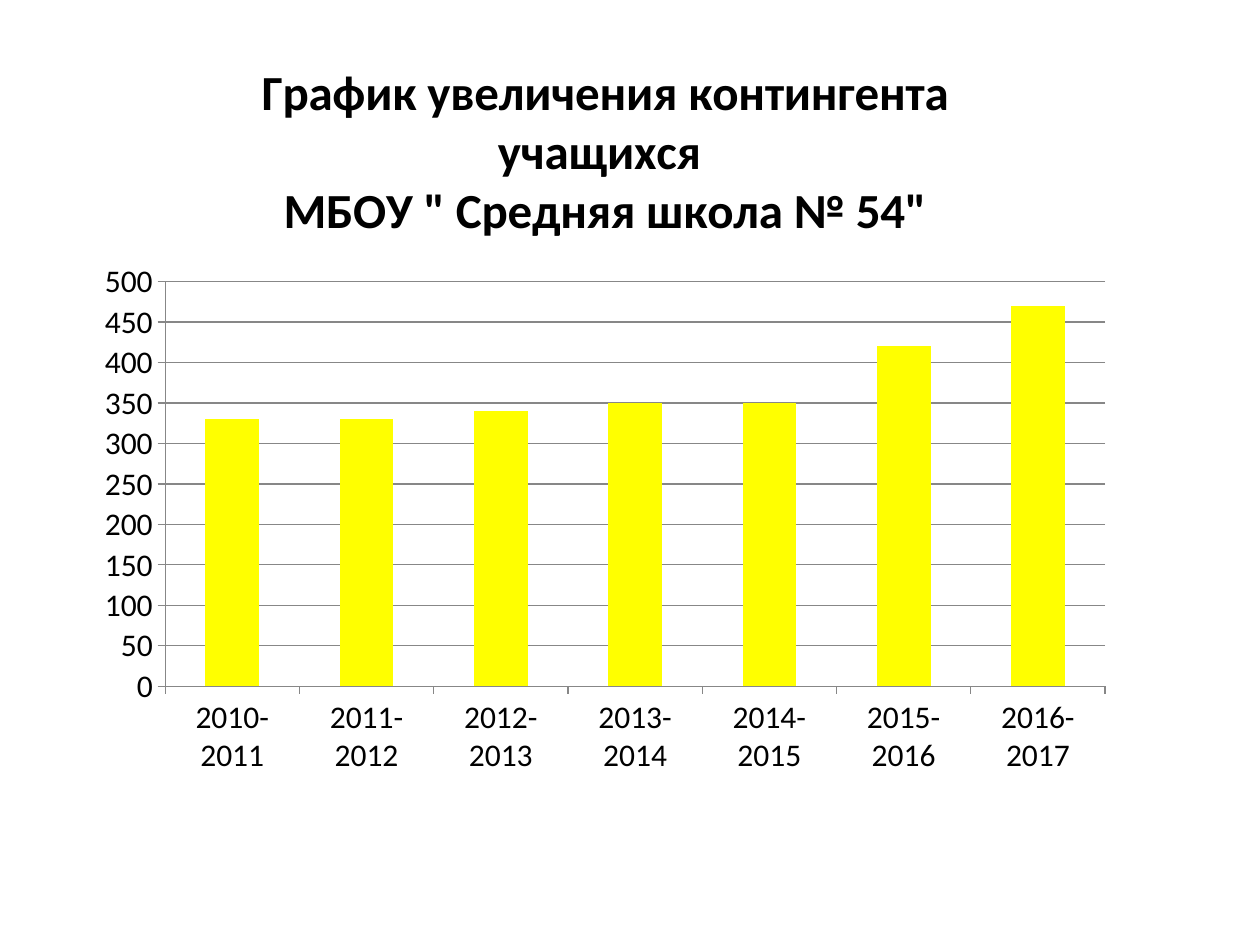
from pptx import Presentation
from pptx.chart.data import CategoryChartData
from pptx.dml.color import RGBColor
from pptx.enum.chart import XL_CHART_TYPE, XL_TICK_MARK
from pptx.util import Pt

COLUMNS = XL_CHART_TYPE.COLUMN_CLUSTERED
TICK_OUTSIDE = XL_TICK_MARK.OUTSIDE
EMU_PER_PX = 914400 // 126
FONT = "Calibri"
BLACK, GREY, YELLOW = "000000", "878787", "FFFF00"
TITLE_LINES = ["График увеличения контингента учащихся ", 'МБОУ " Средняя школа № 54"']
PUPILS = [330, 330, 340, 350, 350, 420, 470]
YEARS = [f"{year}-{year + 1}" for year in range(2010, 2010 + len(PUPILS))]


def px(length):
    return length * EMU_PER_PX


def color(hex_value):
    return RGBColor.from_string(hex_value)


class SlideBuilder:
    """Holds the chart style and the slide being built."""

    def __init__(self, slide):
        self.slide = slide

    def style_font(self, font, size, bold=False):
        font.name = FONT
        font.size = Pt(size)
        font.bold = bold
        font.color.rgb = color(BLACK)

    def style_line(self, line):
        line.color.rgb = color(GREY)
        line.width = Pt(0.75)

    def add_title(self, chart, lines):
        chart.has_title = True
        chart.chart_title.include_in_layout = False
        frame = chart.chart_title.text_frame
        for index, text in enumerate(lines):
            paragraph = frame.add_paragraph() if index else frame.paragraphs[0]
            run = paragraph.add_run()
            run.text = text
            self.style_font(run.font, 28, bold=True)

    def add_column_chart(self, left, top, width, height, categories, values, title):
        data = CategoryChartData()
        data.categories = categories
        data.add_series("Series 1", values)
        frame = self.slide.shapes.add_chart(COLUMNS, px(left), px(top), px(width), px(height), data)
        chart = frame.chart
        chart.has_legend = False
        self.style_font(chart.font, 18)
        self.add_title(chart, title)
        plot = chart.plots[0]
        plot.gap_width = 150
        plot.vary_by_categories = False
        fill = plot.series[0].format.fill
        fill.solid()
        fill.fore_color.rgb = color(YELLOW)
        for axis in (chart.category_axis, chart.value_axis):
            axis.major_tick_mark = TICK_OUTSIDE
            self.style_line(axis.format.line)
        scale = chart.value_axis
        scale.minimum_scale, scale.maximum_scale, scale.major_unit = 0, 500, 50
        scale.has_major_gridlines = True
        self.style_line(scale.major_gridlines.format.line)


def main():
    presentation = Presentation()
    presentation.slide_width = px(1260)
    presentation.slide_height = px(945)
    slide = presentation.slides.add_slide(presentation.slide_layouts[6])
    builder = SlideBuilder(slide)
    builder.add_column_chart(84, 36, 1042, 754, YEARS, PUPILS, TITLE_LINES)
    presentation.save("out.pptx")


if __name__ == "__main__":
    main()
